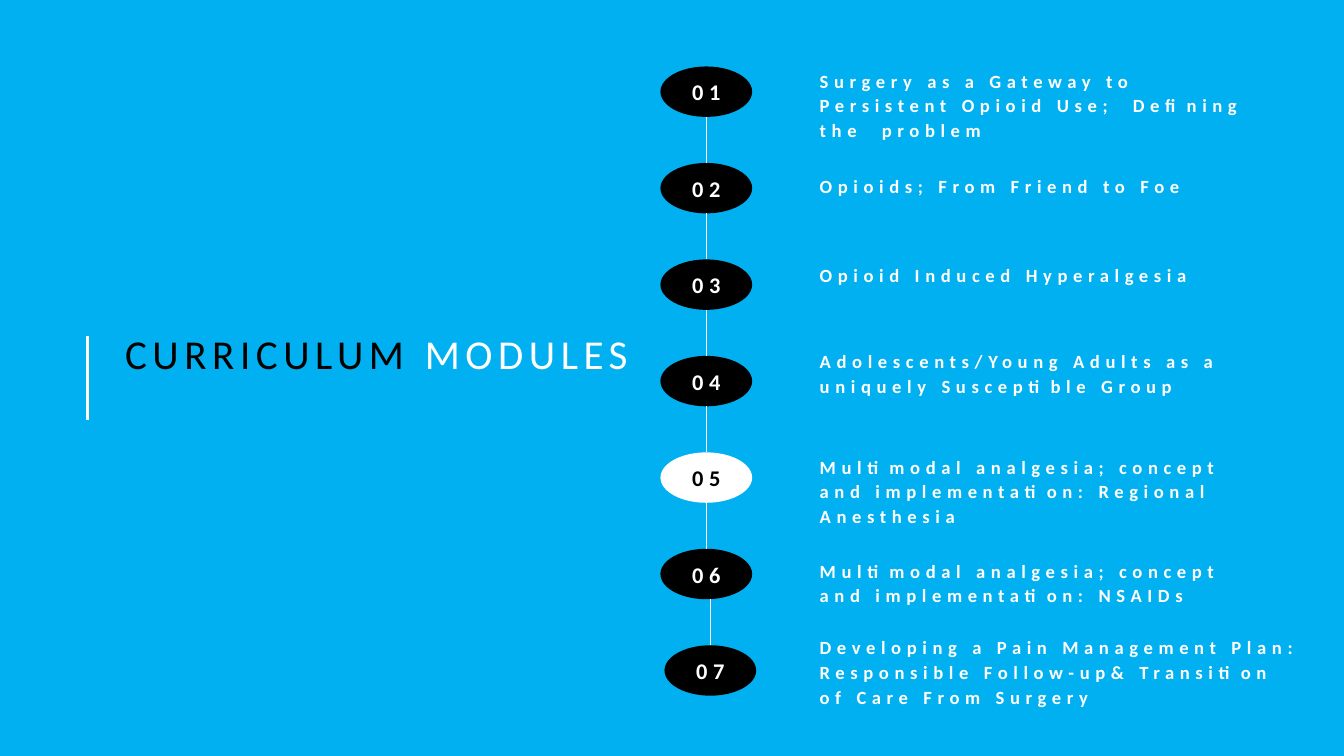
from dataclasses import dataclass

from lxml import etree
from pptx import Presentation
from pptx import util as u
from pptx.dml import color
from pptx.enum import shapes, text
from pptx.oxml import ns

COLORS = {"sky": "00B0F0", "black": "000000", "white": "FFFFFF"}
FONT = "Calibri"
LETTER_SPACING = 4

BADGE_LEFT, BADGE_TOP = 6.55, 0.66
BADGE_WIDTH, BADGE_HEIGHT = 0.91, 0.5
BADGE_PITCH = 0.957
TOPIC_LEFT = 8.13


@dataclass
class Module:
    topic: str
    top: float
    height: float
    width: float = 4.34
    fill: str = "black"
    number_color: str = "white"
    shift: float = 0


MODULES = [
    Module("Surgery as a Gateway to Persistent Opioid Use;  Defining the  problem", 0.67, 0.72),
    Module("Opioids; From Friend to Foe", 1.71, 0.23),
    Module("Opioid Induced Hyperalgesia", 2.6, 0.23),
    Module("Adolescents/Young Adults as a uniquely Susceptible Group", 3.45, 0.47, width=4.59),
    Module("Multimodal analgesia; concept and implementation: Regional Anesthesia",
           4.5, 0.97, fill="white", number_color="black"),
    Module("Multimodal analgesia; concept and implementation: NSAIDs", 5.53, 0.72),
    Module("Developing a Pain Management Plan: Responsible Follow-up& Transition of Care From Surgery",
           6.29, 0.72, width=4.84, shift=0.04),
]


def rgb(name: str) -> color.RGBColor:
    return color.RGBColor.from_string(COLORS[name])


def add_text(slide, runs: list[tuple[str, str]], left: float, top: float, width: float,
             height: float, *, size: float, bold: bool = False,
             align=text.PP_ALIGN.LEFT, line_spacing: float = 1.0) -> None:
    box = slide.shapes.add_textbox(u.Inches(left), u.Inches(top), u.Inches(width), u.Inches(height))
    frame = box.text_frame
    frame.word_wrap = True
    frame.auto_size = text.MSO_AUTO_SIZE.SHAPE_TO_FIT_TEXT
    frame.margin_left = frame.margin_top = frame.margin_right = frame.margin_bottom = 0
    paragraph = frame.paragraphs[0]
    paragraph.alignment = align
    paragraph.line_spacing = line_spacing
    for content, color_name in runs:
        run = paragraph.add_run()
        run.text = content
        run.font.name = FONT
        run.font.size = u.Pt(size)
        run.font.bold = bold
        run.font.color.rgb = rgb(color_name)
        run.font._element.set("spc", str(LETTER_SPACING * 100))


def add_vertical_line(slide, x: float, top: float, bottom: float, weight: float) -> None:
    line = slide.shapes.add_connector(shapes.MSO_CONNECTOR.STRAIGHT, u.Inches(x), u.Inches(top),
                                      u.Inches(x), u.Inches(bottom))
    line.line.color.rgb = rgb("white")
    line.line.width = u.Pt(weight)
    etree.SubElement(line._element.spPr, ns.qn("a:effectLst"))


def add_badge(slide, module: Module, index: int) -> None:
    left = BADGE_LEFT + module.shift
    top = BADGE_TOP + index * BADGE_PITCH
    badge = slide.shapes.add_shape(shapes.MSO_SHAPE.OVAL, u.Inches(left), u.Inches(top),
                                   u.Inches(BADGE_WIDTH), u.Inches(BADGE_HEIGHT))
    badge.shadow.inherit = False
    badge.fill.solid()
    badge.fill.fore_color.rgb = rgb(module.fill)
    badge.line.fill.background()
    add_text(slide, [(f"{index + 1:02d}", module.number_color)], left + 0.03, top + 0.12,
             0.85, 0.27, size=16, bold=True, align=text.PP_ALIGN.CENTER)
    if index:
        previous_bottom = top - BADGE_PITCH + BADGE_HEIGHT
        add_vertical_line(slide, left + BADGE_WIDTH / 2, previous_bottom, top, 1)


def main() -> None:
    presentation = Presentation()
    presentation.slide_width = u.Inches(13.33)
    presentation.slide_height = u.Inches(7.5)
    slide = presentation.slides.add_slide(presentation.slide_layouts[6])
    slide.background.fill.solid()
    slide.background.fill.fore_color.rgb = rgb("sky")

    add_vertical_line(slide, 0.87, 3.33, 4.17, 2.25)
    add_text(slide, [("CURRICULUM ", "black"), ("MODULES", "white")], 1.24, 3.26, 5.28, 0.99,
             size=29.3)
    for index, module in enumerate(MODULES):
        add_badge(slide, module, index)
        add_text(slide, [(module.topic, "white")], TOPIC_LEFT, module.top, module.width,
                 module.height, size=13.3, bold=True, line_spacing=1.1)

    presentation.save("out.pptx")


if __name__ == "__main__":
    main()
